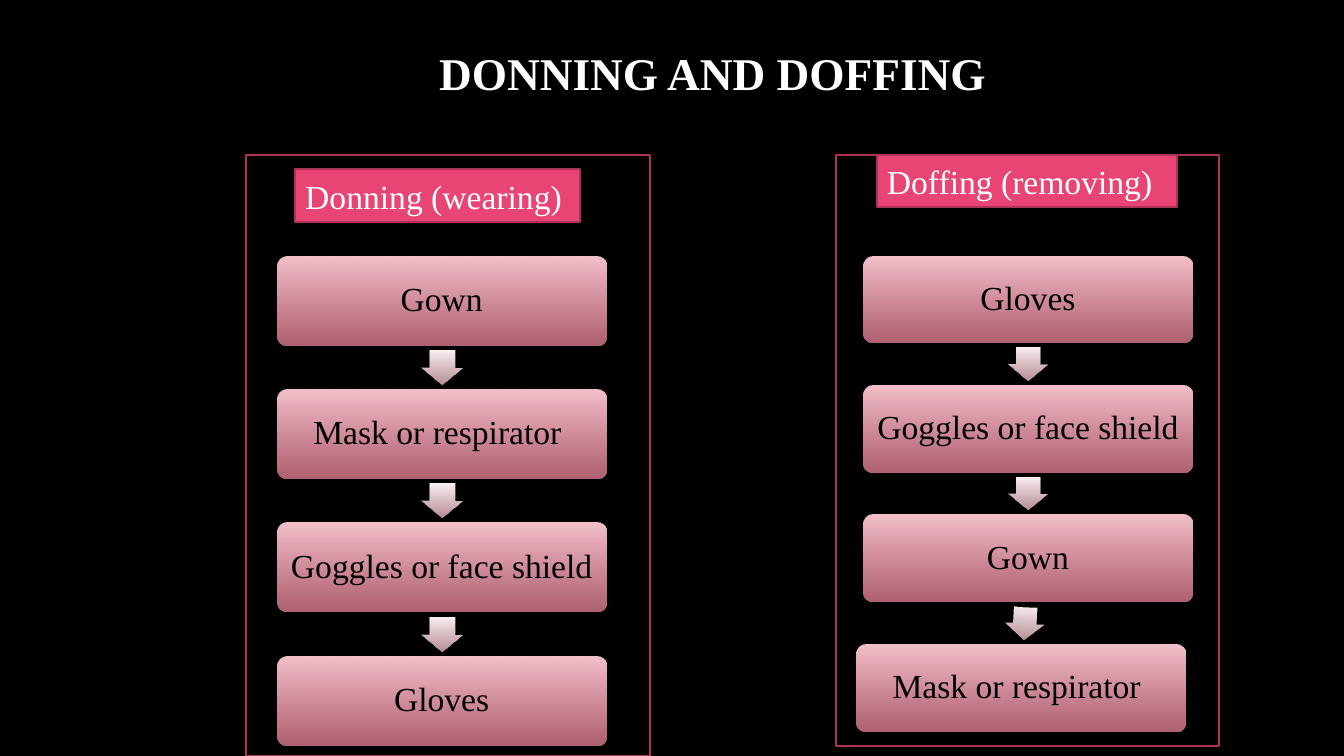
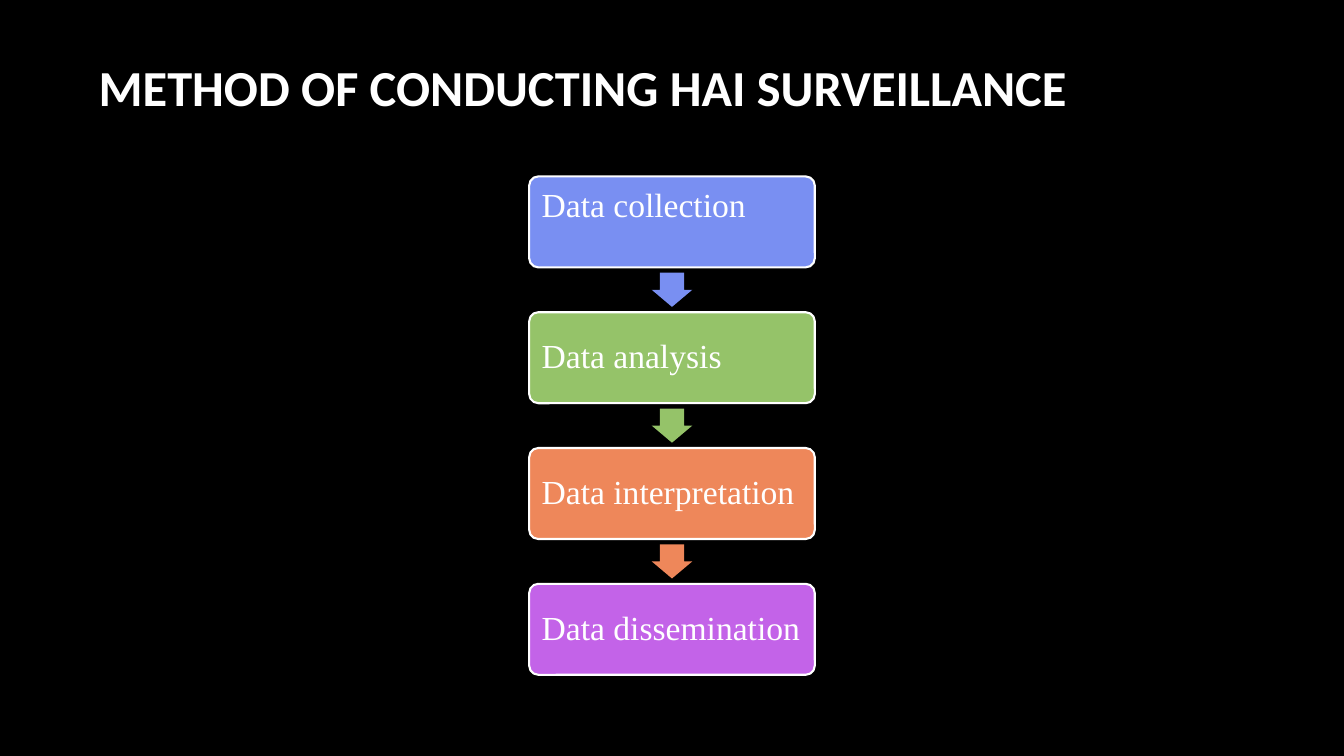
from dataclasses import dataclass
from typing import Any

import lxml.etree
import pptx
import pptx.dml.color
import pptx.enum.shapes
import pptx.enum.text
import pptx.oxml.ns
import pptx.util

Pt = pptx.util.Pt
Kind = pptx.enum.shapes.MSO_SHAPE
Align = pptx.enum.text.PP_ALIGN
Anchor = pptx.enum.text.MSO_ANCHOR
qn = pptx.oxml.ns.qn

HEX = {
    "black": "000000", "white": "FFFFFF", "pink": "E84574", "wine": "AC3356",
    "blush": "F5C1CB", "rose": "EC849A", "pearl": "FDF2F4", "shell": "F4C2CA",
    "blue": "798FF2", "green": "95C369", "orange": "EE875A", "purple": "C363E8",
}
SERIF = "Times New Roman"
BODY = {"name": SERIF, "size": Pt(24), "bold": False}
FRAME = {"word_wrap": True, "margin_left": Pt(7), "margin_right": Pt(7),
         "margin_top": Pt(7), "margin_bottom": Pt(7)}
ROSY = ("blush", "rose")
PALE = ("pearl", "shell")


@dataclass
class Box:
    left: float
    top: float
    width: float
    height: float


@dataclass
class Step:
    text: str
    fill: Any = ROSY
    arrow: Any = PALE
    shift: float = 0
    turn: float = 0
    anchor: Any = Anchor.MIDDLE


@dataclass
class Flow:
    first: Box
    pitch: float
    wide: float
    tall: float
    steps: list[Step]
    ink: str = "black"
    edge: str | None = None
    align: Any = Align.CENTER


@dataclass
class Panel:
    frame: Box
    label: Box
    name: str
    flow: Flow


def shade(name: str) -> pptx.dml.color.RGBColor:
    return pptx.dml.color.RGBColor.from_string(HEX[name])


def apply(item: Any, values: dict) -> None:
    for key, value in values.items():
        setattr(item, key, value)


def paint(shape: Any, fill: Any) -> None:
    if fill is None:
        shape.fill.background()
    elif isinstance(fill, str):
        shape.fill.solid()
        shape.fill.fore_color.rgb = shade(fill)
    else:
        shape.fill.gradient()
        shape.fill.gradient_angle = 270
        for stop, name, place in zip(shape.fill.gradient_stops, fill, (0, 1)):
            stop.color.rgb = shade(name)
            stop.position = place
        last = list(shape.element.iter(qn("a:gs")))[-1]
        lxml.etree.SubElement(last[0], qn("a:alpha"), val="74000")


def draw(slide: Any, kind: Any, box: Box, fill: Any, edge: str | None = None,
         bends: tuple = ()) -> Any:
    shape = slide.shapes.add_shape(
        kind, Pt(box.left), Pt(box.top), Pt(box.width), Pt(box.height))
    shape.shadow.inherit = False
    for spot, bend in enumerate(bends):
        shape.adjustments[spot] = bend
    paint(shape, fill)
    if edge:
        shape.line.color.rgb = shade(edge)
        shape.line.width = Pt(1.5)
    else:
        shape.line.fill.background()
    return shape


def write(shape: Any, text: str, ink: str, align: Any, font: dict = BODY,
          anchor: Any = Anchor.MIDDLE, space: float = 1) -> None:
    frame = shape.text_frame
    apply(frame, FRAME | {"vertical_anchor": anchor})
    para = frame.paragraphs[0]
    apply(para, {"alignment": align, "line_spacing": space})
    run = para.add_run()
    run.text = text
    apply(run.font, font)
    run.font.color.rgb = shade(ink)


def start(deck: Any, title: str, box: Box, font: dict, align: Any) -> Any:
    slide = deck.slides.add_slide(deck.slide_layouts[6])
    slide.background.fill.solid()
    slide.background.fill.fore_color.rgb = shade("black")
    head = slide.shapes.add_textbox(
        Pt(box.left), Pt(box.top), Pt(box.width), Pt(box.height))
    write(head, title, "white", align, font)
    return slide


def chain(slide: Any, flow: Flow) -> None:
    base = flow.first
    gap = flow.pitch - base.height
    for spot, step in enumerate(flow.steps):
        top = base.top + spot * flow.pitch
        box = Box(base.left + step.shift, top, base.width, base.height)
        if spot:
            prior = flow.steps[spot - 1]
            mid = base.left + (base.width + step.shift + prior.shift) / 2
            place = Box(mid - flow.wide / 2, top - (gap + flow.tall) / 2,
                        flow.wide, flow.tall)
            arrow = draw(slide, Kind.DOWN_ARROW, place, prior.arrow, bends=(0.6, 0.5))
            arrow.rotation = step.turn
        card = draw(slide, Kind.ROUNDED_RECTANGLE, box, step.fill, flow.edge, (0.1,))
        write(card, step.text, flow.ink, flow.align, anchor=step.anchor, space=0.9)


def board(slide: Any, panel: Panel) -> None:
    chain(slide, panel.flow)
    label = draw(slide, Kind.RECTANGLE, panel.label, "pink", "wine")
    write(label, panel.name, "white", Align.LEFT)
    draw(slide, Kind.RECTANGLE, panel.frame, None, "wine")


PANELS = [
    Panel(Box(175.5, 111, 289, 429), Box(211, 121, 203, 37.5), "Donning (wearing)",
          Flow(Box(198, 183, 235, 63.5), 95.3, 29, 24, [
              Step("Gown"), Step("Mask or respirator "),
              Step("Goggles or face shield "), Step("Gloves")])),
    Panel(Box(597, 111, 273.5, 422), Box(626.5, 111, 214.5, 37), "Doffing (removing)",
          Flow(Box(617, 183, 234.5, 62), 92.4, 27.5, 23.3, [
              Step("Gloves"), Step("Goggles or face shield "), Step("Gown"),
              Step("Mask or respirator ", shift=-5, turn=3)])),
]
METHOD = Flow(Box(378, 126, 204, 65), 97, 29, 24.4, [
    Step("Data collection", "blue", "blue", anchor=Anchor.TOP),
    Step("Data analysis", "green", "green"),
    Step("Data interpretation", "orange", "orange"),
    Step("Data dissemination", "purple"),
], "white", "white", Align.LEFT)


def main() -> None:
    deck = pptx.Presentation()
    apply(deck, {"slide_width": Pt(960), "slide_height": Pt(540)})
    slide = start(deck, "DONNING AND DOFFING", Box(95, 32, 828, 39),
                  {"name": SERIF, "size": Pt(32.4), "bold": True}, Align.CENTER)
    for panel in PANELS:
        board(slide, panel)
    slide = start(deck, "METHOD OF CONDUCTING HAI SURVEILLANCE", Box(63.5, 29.5, 865, 64),
                  {"name": "Calibri", "size": Pt(36), "bold": True}, Align.LEFT)
    chain(slide, METHOD)
    deck.save("out.pptx")


if __name__ == "__main__":
    main()
